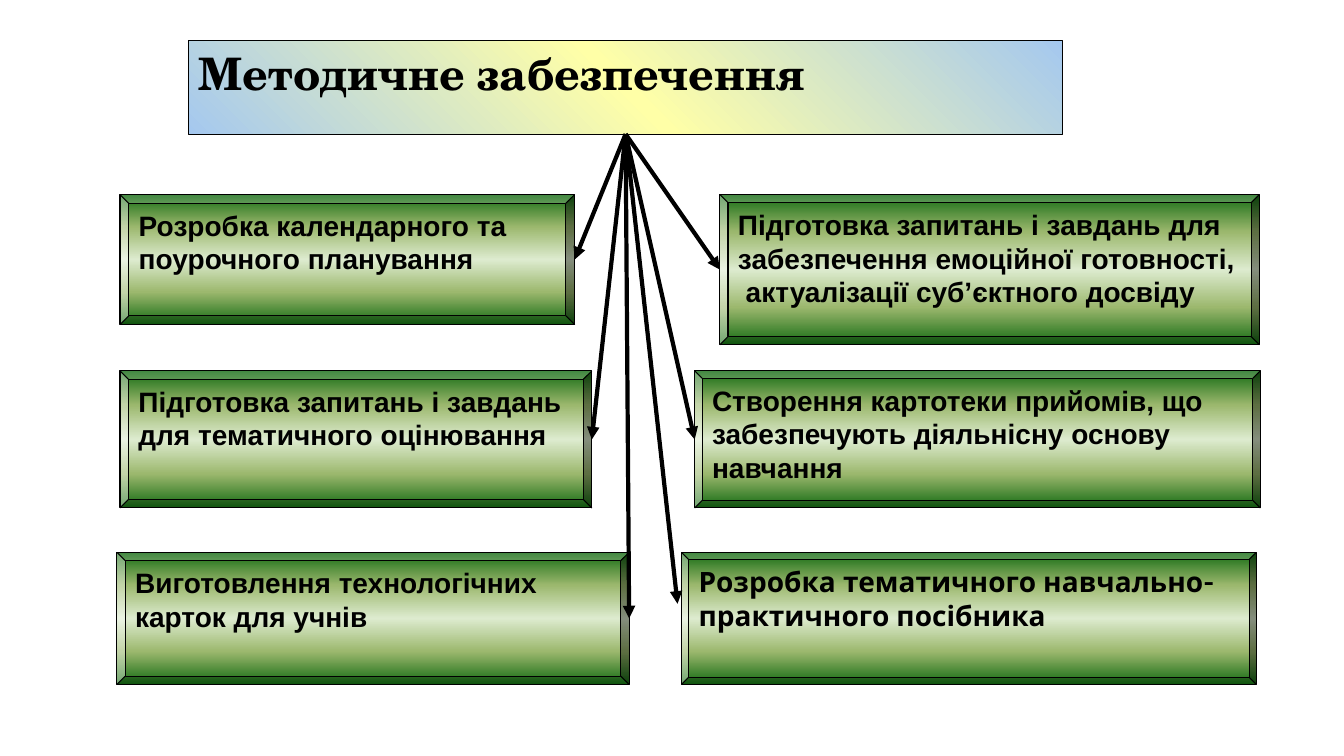
from lxml import etree
from pptx import Presentation, util as u
from pptx.dml.color import RGBColor
from pptx.enum import shapes, text
from pptx.oxml import parse_xml
from pptx.oxml.ns import nsdecls, qn

GREEN = ["156B13", "9CB86E", "DDEBCF", "9CB86E", "156B13"]
SKY = ["A5C8EF", "FFFFA7", "A5C8EF"]
INK = RGBColor.from_string("000000")


def write(shape, words, size=20, font="Arial"):
    frame = shape.text_frame
    frame.word_wrap = True
    frame.auto_size = text.MSO_AUTO_SIZE.NONE
    frame.vertical_anchor = text.MSO_ANCHOR.TOP
    frame.margin_left = frame.margin_right = u.Inches(0.1)
    frame.margin_top = frame.margin_bottom = u.Inches(0.05)
    frame.text = words
    para = frame.paragraphs[0]
    para.alignment = text.PP_ALIGN.LEFT
    para.space_before = u.Pt(0)
    for run in para.runs:
        run.font.size = u.Pt(size)
        run.font.name = font
        run.font.bold = True
        run.font.color.rgb = INK


def paint(shape, tones, angle):
    shape.fill.gradient()
    shape.fill.gradient_angle = angle
    stops = shape.element.spPr.find(".//" + qn("a:gsLst"))
    for old in list(stops):
        stops.remove(old)
    for i, tone in enumerate(tones):
        spot = str(100000 * i // (len(tones) - 1))
        stop = etree.SubElement(stops, qn("a:gs"), pos=spot)
        etree.SubElement(stop, qn("a:srgbClr"), val=tone)
    shape.line.color.rgb = INK
    shape.line.width = u.Pt(0.75)


deck = Presentation()
deck.slide_width, deck.slide_height = u.Inches(13.33), u.Inches(7.5)
slide = deck.slides.add_slide(deck.slide_layouts[5])

# Heading: the title placeholder with a bevelled outline
head = slide.shapes.title
head.left, head.top, head.width, head.height = map(u.Inches, (1.87, 0.4, 8.67, 0.93))
head.element.spPr.append(parse_xml(
    f'<a:prstGeom {nsdecls("a")} prst="bevel"><a:avLst>'
    '<a:gd name="adj" fmla="val 12500"/></a:avLst></a:prstGeom>'))
paint(head, SKY, 45)
write(head, "Методичне забезпечення", size=32, font="TeX Gyre Schola")

# Boxes: row, left, width, height, bevel depth, font, words
rows = [1.93, 3.68, 5.48]
boxes = [
    (0, 1.19, 4.51, 1.29, 0.068, "Arial", "Розробка календарного та поурочного планування"),
    (1, 1.19, 4.68, 1.36, 0.062, "Arial", "Підготовка запитань і завдань для тематичного оцінювання"),
    (2, 1.16, 5.08, 1.31, 0.062, "Arial", "Виготовлення технологічних карток для учнів"),
    (0, 7.14, 5.35, 1.49, 0.054, "Arial",
     "Підготовка запитань і завдань для забезпечення емоційної готовності,\v актуалізації суб’єктного досвіду"),
    (1, 6.89, 5.61, 1.36, 0.054, "Arial",
     "Створення картотеки прийомів, що забезпечують діяльнісну основу навчання"),
    (2, 6.76, 5.7, 1.31, 0.054, "Karla", "Розробка тематичного навчально-практичного посібника"),
]
ends = []
for row, left, wide, high, depth, font, words in boxes:
    top = rows[row]
    box = slide.shapes.add_shape(shapes.MSO_SHAPE.BEVEL, *map(u.Inches, (left, top, wide, high)))
    box.adjustments[0] = depth
    box.shadow.inherit = False
    paint(box, GREEN, 90)
    write(box, words, font=font)
    ends.append((left + wide if left < 6 else left, top + high / 2))
ends[-1] = (6.72, 5.99)  # the last arrow stops just short of its box

# Arrows: from the heading to the inner side of each box
for x, y in ends:
    line = slide.shapes.add_connector(
        shapes.MSO_CONNECTOR.STRAIGHT, *map(u.Inches, (6.21, 1.33, x, y)))
    line.begin_connect(head, 2)
    line.line.color.rgb = INK
    line.line.width = u.Pt(3)
    etree.SubElement(line.line._get_or_add_ln(), qn("a:tailEnd"), type="triangle")
    etree.SubElement(line._element.spPr, qn("a:effectLst"))

deck.save("out.pptx")
